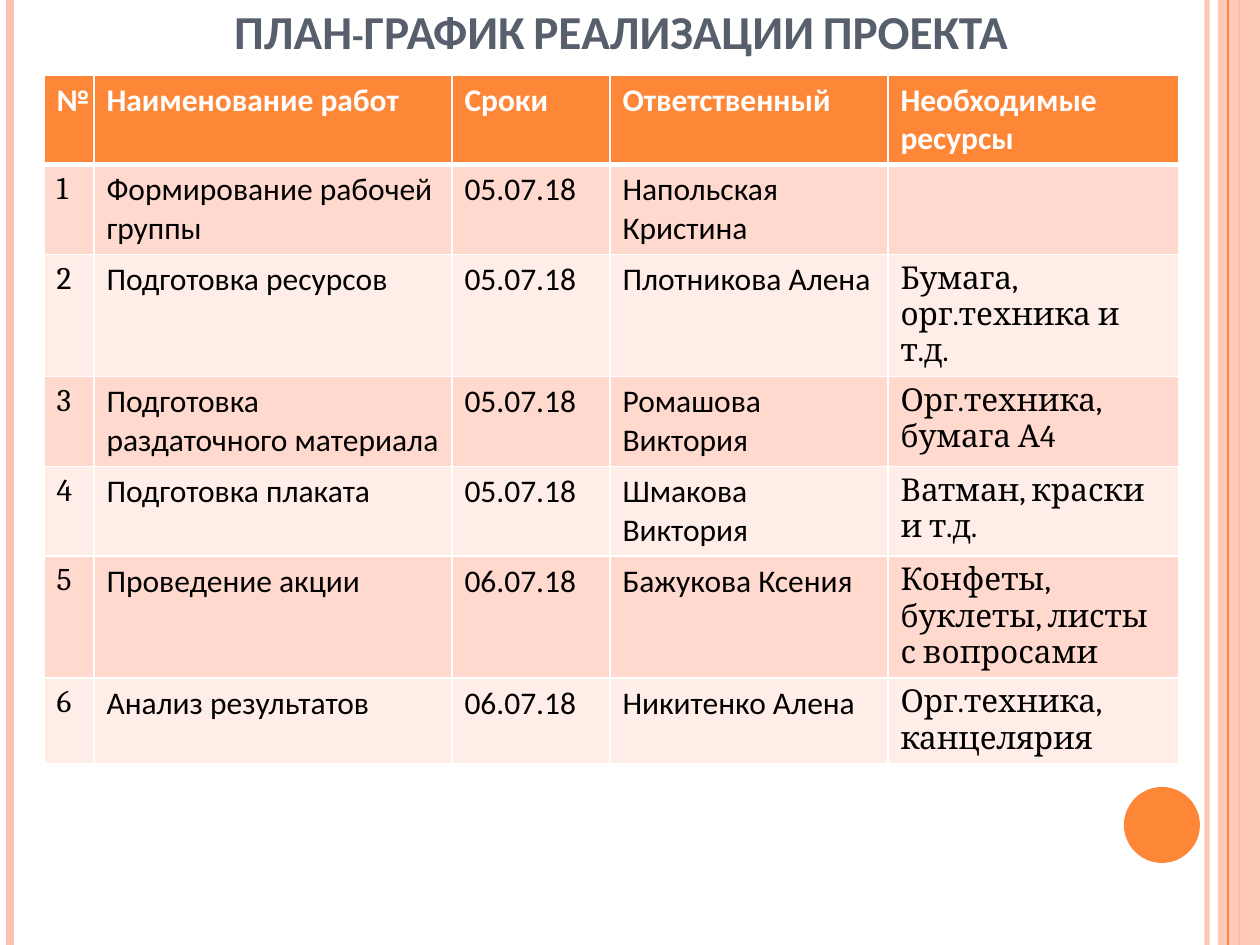
from dataclasses import dataclass

from lxml.etree import SubElement
from pptx import Presentation
from pptx.dml.color import RGBColor
from pptx.enum.shapes import MSO_CONNECTOR, MSO_SHAPE
from pptx.enum.text import MSO_ANCHOR, MSO_AUTO_SIZE, PP_ALIGN
from pptx.oxml.ns import qn
from pptx.util import Emu, Pt

EMU_PER_PX = 914400 / 126
SLIDE_WIDTH, SLIDE_HEIGHT = 1260, 945


@dataclass(frozen=True)
class Theme:
    accent: str = "FE8637"
    accent_light: str = "FEC3AE"
    band_dark: str = "FFD9CE"
    band_light: str = "FFEDE8"
    title: str = "575F6D"
    text: str = "000000"
    white: str = "FFFFFF"
    sans: str = "Calibri"
    serif: str = "Cambria"
    title_size: int = 27
    body_size: int = 18


def px(length):
    return Emu(round(length * EMU_PER_PX))


def set_opacity(fill_parent, percent):
    color = next(fill_parent.iter(qn("a:srgbClr")))
    SubElement(color, qn("a:alpha"), val=str(percent * 1000))


class SlideBuilder:
    def __init__(self, slide, theme):
        self.slide = slide
        self.theme = theme

    def run(self, paragraph, text, size, color, font, bold=False):
        run = paragraph.add_run()
        run.text = text
        run.font.size = Pt(size)
        run.font.name = font
        run.font.bold = bold
        run.font.color.rgb = RGBColor.from_string(color)
        return run

    def title(self, text, left, top, width, height):
        shape = self.slide.shapes.title
        shape.left, shape.top = px(left), px(top)
        shape.width, shape.height = px(width), px(height)
        frame = shape.text_frame
        frame.auto_size = MSO_AUTO_SIZE.NONE
        frame.vertical_anchor = MSO_ANCHOR.BOTTOM
        paragraph = frame.paragraphs[0]
        paragraph.alignment = PP_ALIGN.CENTER
        run = self.run(paragraph, text, self.theme.title_size,
                       self.theme.title, self.theme.sans, bold=True)
        run.font._element.set("cap", "small")

    def vertical_line(self, x, color, width, opacity=100):
        line = self.slide.shapes.add_connector(
            MSO_CONNECTOR.STRAIGHT, px(x), 0, px(x), px(SLIDE_HEIGHT))
        line.line.color.rgb = RGBColor.from_string(color)
        line.line.width = Pt(width)
        properties = line._element.spPr
        if opacity < 100:
            set_opacity(properties, opacity)
        SubElement(properties, qn("a:effectLst"))

    def filled_shape(self, kind, left, top, width, height, color, opacity=100):
        shape = self.slide.shapes.add_shape(
            kind, px(left), px(top), px(width), px(height))
        shape.shadow.inherit = False
        shape.fill.solid()
        shape.fill.fore_color.rgb = RGBColor.from_string(color)
        shape.line.fill.background()
        if opacity < 100:
            set_opacity(shape._element.spPr, opacity)

    def cell_borders(self, cell, top, bottom):
        properties = cell._tc.get_or_add_tcPr()
        for side, width in (("L", 1), ("R", 1), ("T", top), ("B", bottom)):
            border = SubElement(properties, qn(f"a:ln{side}"), w=str(Pt(width)))
            fill = SubElement(border, qn("a:solidFill"))
            SubElement(fill, qn("a:srgbClr"), val=self.theme.white)

    def table(self, left, top, column_widths, row_heights, rows, serif_columns):
        theme = self.theme
        table = self.slide.shapes.add_table(
            len(rows), len(column_widths), px(left), px(top),
            px(sum(column_widths)), px(sum(row_heights))).table
        for column, width in zip(table.columns, column_widths):
            column.width = px(width)
        for row, height in zip(table.rows, row_heights):
            row.height = px(height)
        for row_index, values in enumerate(rows):
            header = row_index == 0
            band = theme.band_dark if row_index % 2 else theme.band_light
            for column_index, text in enumerate(values):
                cell = table.cell(row_index, column_index)
                self.cell_borders(cell, top=3 if row_index == 1 else 1,
                                  bottom=3 if header else 1)
                cell.fill.solid()
                cell.fill.fore_color.rgb = RGBColor.from_string(
                    theme.accent if header else band)
                if text:
                    serif = column_index in serif_columns and not header
                    self.run(cell.text_frame.paragraphs[0], text, theme.body_size,
                             theme.white if header else theme.text,
                             theme.serif if serif else theme.sans, bold=header)


PLAN = [
    ("№", "Наименование работ", "Сроки", "Ответственный", "Необходимые ресурсы"),
    ("1", "Формирование рабочей группы", "05.07.18", "Напольская Кристина", ""),
    ("2", "Подготовка ресурсов", "05.07.18", "Плотникова Алена",
     "Бумага, орг.техника и т.д."),
    ("3", "Подготовка раздаточного материала", "05.07.18", "Ромашова Виктория",
     "Орг.техника, бумага А4"),
    ("4", "Подготовка плаката", "05.07.18", "Шмакова Виктория",
     "Ватман, краски и т.д."),
    ("5", "Проведение акции", "06.07.18", "Бажукова Ксения",
     "Конфеты, буклеты, листы с вопросами"),
    ("6", "Анализ результатов", "06.07.18", "Никитенко Алена",
     "Орг.техника, канцелярия"),
]


def main():
    presentation = Presentation()
    presentation.slide_width = px(SLIDE_WIDTH)
    presentation.slide_height = px(SLIDE_HEIGHT)
    theme = Theme()
    slide = presentation.slides.add_slide(presentation.slide_layouts[5])
    builder = SlideBuilder(slide, theme)

    # Side stripes and corner disc
    builder.vertical_line(1207, theme.accent_light, 3, opacity=93)
    builder.vertical_line(10, theme.accent_light, 4.5)
    builder.vertical_line(1239, theme.accent, 1.5)
    builder.filled_shape(MSO_SHAPE.RECTANGLE, 1218, 0, 42, SLIDE_HEIGHT,
                         theme.accent_light, opacity=87)
    builder.vertical_line(1228, theme.accent, 0.75)
    builder.filled_shape(MSO_SHAPE.OVAL, 1124, 787, 76, 76, theme.accent)

    # Heading
    builder.title("ПЛАН-ГРАФИК РЕАЛИЗАЦИИ ПРОЕКТА", 54, 0, 1134, 65)

    # Schedule
    builder.table(44, 75, column_widths=[50, 358, 158, 278, 291],
                  row_heights=[89, 90, 122, 90, 89, 122, 85],
                  rows=PLAN, serif_columns={0, 4})

    presentation.save("out.pptx")


if __name__ == "__main__":
    main()
